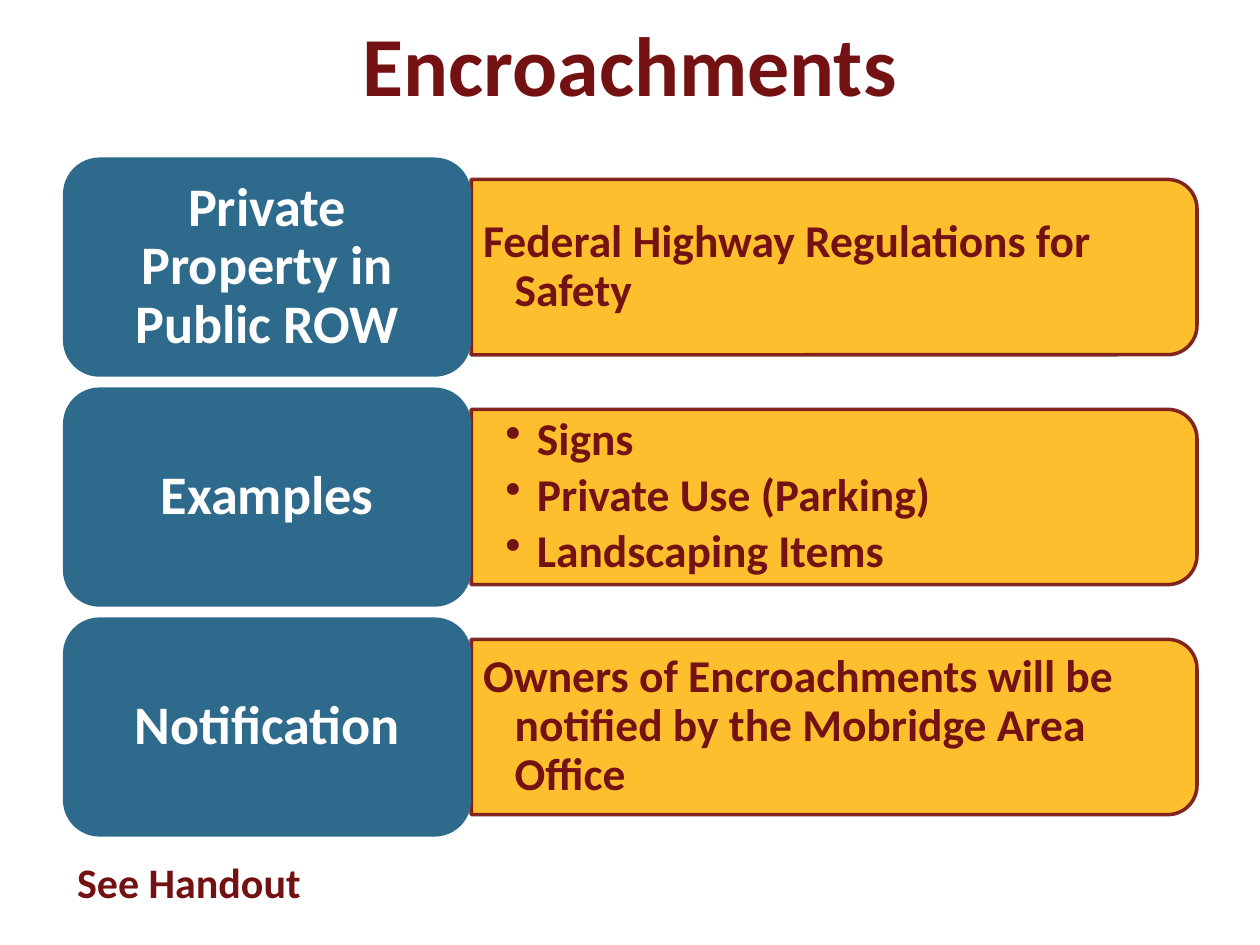
from lxml.etree import SubElement
from pptx import Presentation
from pptx.dml.color import RGBColor
from pptx.enum.shapes import MSO_SHAPE
from pptx.enum.text import MSO_ANCHOR, MSO_AUTO_SIZE, PP_ALIGN
from pptx.oxml.ns import qn
from pptx.util import Pt

MAROON = RGBColor(0x74, 0x11, 0x12)
GOLD = RGBColor(0xFD, 0xB9, 0x17)
BLUE = RGBColor(0x2E, 0x6A, 0x8C)
WHITE = RGBColor(0xFF, 0xFF, 0xFF)

LEFT, TOP, PITCH = 36, 90, 131.4
LABEL_W, LABEL_H = 233.3, 125.25
PANEL_W, PANEL_H = 414.7, 100.2
TEXT_W, TEXT_H = 409.7, 90

TITLE = {"size": Pt(48), "color": MAROON}
NOTE = {"size": Pt(24), "color": MAROON}
LABEL = {"size": Pt(31), "color": WHITE}
DETAIL = {"size": Pt(26), "color": MAROON}
CENTERED = {"alignment": PP_ALIGN.CENTER}
TIGHT = {"line_spacing": 0.9}
LISTED = {"line_spacing": 0.9, "space_after": Pt(3.9)}

ROWS = [
    ("Private Property in Public ROW", ["Federal Highway Regulations for Safety"]),
    ("Examples", ["Signs", "Private Use (Parking)", "Landscaping Items"]),
    ("Notification",
     ["Owners of Encroachments will be notified by the Mobridge Area Office"]),
]


def set_attributes(obj, values):
    """Set each named attribute of an object."""
    for name, value in values.items():
        setattr(obj, name, value)


def set_hanging(p, bullet):
    """Give a paragraph a hanging indent and, if wanted, a bullet."""
    pPr = p._p.get_or_add_pPr()
    pPr.set("marL", str(Pt(18)))
    pPr.set("indent", str(-Pt(18)))
    if bullet:
        SubElement(pPr, qn("a:buChar"), char="•")
    else:
        SubElement(pPr, qn("a:buNone"))


def write_text(sp, lines, font, layout, margins=(7.2, 3.6), hanging=False):
    """Fill a shape with vertically centred, formatted paragraphs."""
    tf = sp.text_frame
    x, y = (Pt(m) for m in margins)
    set_attributes(tf, {
        "word_wrap": True, "vertical_anchor": MSO_ANCHOR.MIDDLE,
        "margin_left": x, "margin_right": x, "margin_top": y, "margin_bottom": y})
    for i, line in enumerate(lines):
        p = tf.paragraphs[0] if i == 0 else tf.add_paragraph()
        set_attributes(p, layout)
        if hanging:
            set_hanging(p, len(lines) > 1)
        r = p.add_run()
        r.text = line
        set_attributes(r.font, {"name": "Calibri", "bold": True, "size": font["size"]})
        r.font.color.rgb = font["color"]


def add_text(s, box, lines, font, layout, **options):
    """Add a text box and write its lines."""
    sp = s.shapes.add_textbox(*map(Pt, box))
    write_text(sp, lines, font, layout, **options)
    return sp


def add_panel(s, left, middle):
    """Add a translucent gold panel with its rounded corners on the right."""
    sp = s.shapes.add_shape(
        MSO_SHAPE.ROUND_2_SAME_RECTANGLE,
        Pt(left + (PANEL_W - PANEL_H) / 2), Pt(middle - PANEL_W / 2),
        Pt(PANEL_H), Pt(PANEL_W))
    sp.rotation = 90
    sp.shadow.inherit = False
    sp.fill.solid()
    sp.fill.fore_color.rgb = GOLD
    sp.line.color.rgb = MAROON
    sp.line.width = Pt(2)
    for color in sp._element.spPr.iter(qn("a:srgbClr")):
        SubElement(color, qn("a:alpha"), val="90000")


def add_label(s, top, text):
    """Add a blue rounded label with white text."""
    sp = s.shapes.add_shape(
        MSO_SHAPE.ROUNDED_RECTANGLE, Pt(LEFT), Pt(top), Pt(LABEL_W), Pt(LABEL_H))
    sp.shadow.inherit = False
    sp.fill.solid()
    sp.fill.fore_color.rgb = BLUE
    sp.line.fill.background()
    write_text(sp, [text], LABEL, {**CENTERED, **TIGHT}, margins=(9.3, 4.65))


def add_row(s, top, label, details):
    """Add one label with its panel of details."""
    left, middle = LEFT + LABEL_W, top + LABEL_H / 2
    add_panel(s, left, middle)
    margins = (19.5, 9.75) if len(details) > 1 else (6.8, 3.4)
    add_text(s, (left, middle - TEXT_H / 2, TEXT_W, TEXT_H), details, DETAIL,
             LISTED, margins=margins, hanging=True)
    add_label(s, top, label)


def main():
    """Build and save the slide."""
    prs = Presentation()
    prs.slide_width, prs.slide_height = Pt(720), Pt(540)
    s = prs.slides.add_slide(prs.slide_layouts[6])
    add_text(s, (LEFT, 0, 648, 72), ["Encroachments"], TITLE, CENTERED)
    note = add_text(s, (LEFT, 486, 144, 36), ["See Handout"], NOTE, CENTERED)
    note.text_frame.auto_size = MSO_AUTO_SIZE.SHAPE_TO_FIT_TEXT
    for i, (label, details) in enumerate(ROWS):
        add_row(s, TOP + i * PITCH, label, details)
    prs.save("out.pptx")


if __name__ == "__main__":
    main()
